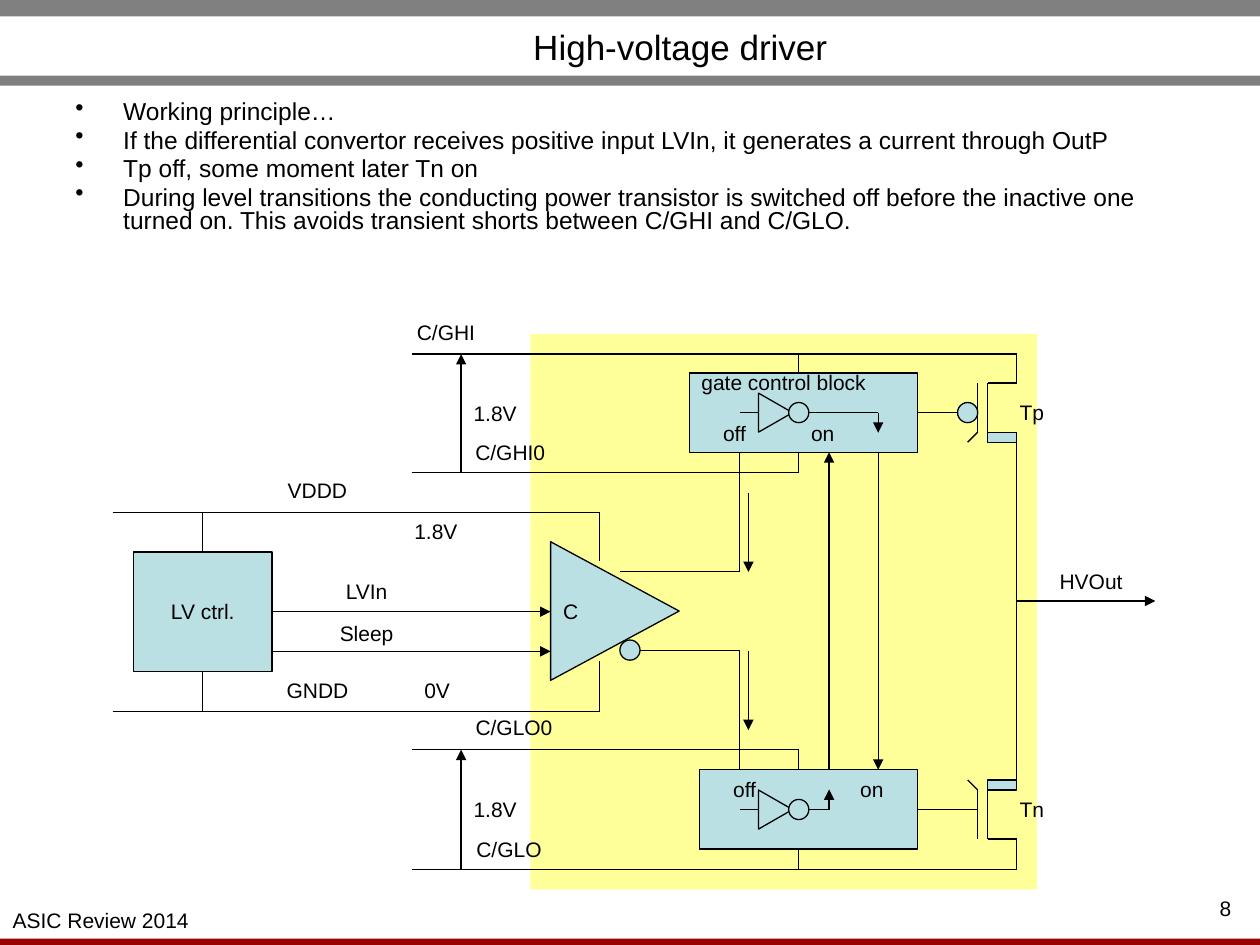
from dataclasses import dataclass

from lxml.etree import SubElement
from pptx import Presentation
from pptx.dml.color import RGBColor
from pptx.enum.shapes import MSO_CONNECTOR, MSO_SHAPE
from pptx.enum.text import MSO_AUTO_SIZE, PP_ALIGN
from pptx.oxml.ns import qn
from pptx.util import Inches, Pt

BLACK, BLUE, YELLOW, GRAY, RED = "000000", "BBE0E3", "FFFF99", "808080", "990000"
TOP, RIGHT, BOTTOM = 0, 3, 2
STUB = 0.155    # gap between a supply rail and its gate block
DOT = 0.16      # inverting bubble


@dataclass
class Box:
    x: float
    y: float
    w: float
    h: float

    @property
    def right(self):
        return self.x + self.w

    @property
    def bottom(self):
        return self.y + self.h

    @property
    def midx(self):
        return self.x + self.w / 2

    @property
    def midy(self):
        return self.y + self.h / 2

    def size(self):
        return [Inches(v) for v in (self.x, self.y, self.w, self.h)]


def color(code):
    return RGBColor.from_string(code)


def text(slide, box, lines, size=12, align=PP_ALIGN.CENTER, wrap=True,
         bullet=False, spacing=None, before=0):
    frame = slide.shapes.add_textbox(*box.size()).text_frame
    frame.word_wrap = wrap
    if not wrap:
        frame.auto_size = MSO_AUTO_SIZE.SHAPE_TO_FIT_TEXT
    for i, line in enumerate(lines):
        para = frame.paragraphs[0] if i == 0 else frame.add_paragraph()
        para.text = line
        para.alignment = align
        para.line_spacing = spacing
        if i:
            para.space_before = Pt(before)
        if bullet:
            props = para._p.get_or_add_pPr()
            props.set("marL", str(Inches(0.38)))
            props.set("indent", str(-Inches(0.38)))
            SubElement(props, qn("a:buChar")).set("char", "•")
            # the bullet takes its size from the paragraph end
            SubElement(para._p, qn("a:endParaRPr")).set("sz", str(size * 100))
        font = para.runs[0].font
        font.name, font.size = "Arial", Pt(size)
        font.color.rgb = color(BLACK)


def label(slide, words, midx, midy, w=1.0):
    text(slide, Box(midx - w / 2, midy - 0.15, w, 0.3), [words], wrap=False)


def shape(slide, box, fill, kind=MSO_SHAPE.RECTANGLE, line=BLACK, turn=0):
    item = slide.shapes.add_shape(kind, *box.size())
    item.shadow.inherit = False
    item.rotation = turn
    item.fill.solid()
    item.fill.fore_color.rgb = color(fill)
    if line:
        item.line.color.rgb = color(line)
        item.line.width = Pt(0.75)
    else:
        item.line.fill.background()
    return item


def wire(slide, *points, arrow=False, start=None):
    """Joins the points; start is a (shape, site) pair for the first end."""
    for i, (a, b) in enumerate(zip(points, points[1:])):
        line = slide.shapes.add_connector(
            MSO_CONNECTOR.STRAIGHT, *[Inches(v) for v in (*a, *b)])
        line.line.color.rgb = color(BLACK)
        line.line.width = Pt(0.75)
        if start and i == 0:
            line.begin_connect(*start)
        if arrow and b == points[-1]:
            SubElement(line.line._get_or_add_ln(), qn("a:tailEnd")).set("type", "triangle")
        SubElement(line._element.spPr, qn("a:effectLst"))


def bubble(slide, x, midy):
    shape(slide, Box(x, midy - DOT / 2, DOT, DOT), BLUE, MSO_SHAPE.OVAL)


def wedge(slide, box):
    """Triangle that points right and fills the box."""
    frame = Box(box.midx - box.h / 2, box.midy - box.w / 2, box.h, box.w)
    shape(slide, frame, BLUE, MSO_SHAPE.ISOSCELES_TRIANGLE, turn=90)


def header(slide, box):
    for y, h in ((box.y, 0.13), (box.bottom - 0.08, 0.08)):
        shape(slide, Box(box.x, y, box.w, h), GRAY, line=None)
    text(slide, Box(box.x + 1.3, box.y + 0.15, 8.2, 0.38), ["High-voltage driver"], size=20)


def footer(slide, box):
    shape(slide, Box(box.x, box.bottom - 0.05, box.w, 0.05), RED, line=None)
    label(slide, "ASIC Review 2014", box.x + 0.8, box.y + 0.24, w=1.6)
    text(slide, Box(box.right - 0.51, box.y, 0.47, 0.24), ["8"])


def points(slide, box):
    text(slide, box, [
        "Working principle…",
        "If the differential convertor receives positive input LVIn, it generates a current through OutP",
        "Tp off, some moment later Tn on",
        "During level transitions the conducting power transistor is switched off before the inactive one "
        "turned on. This avoids transient shorts between C/GHI and C/GLO.",
    ], size=14, align=PP_ALIGN.LEFT, bullet=True, spacing=0.8, before=2.8)


def supply(slide, box, ends, names):
    """Two rails 1.8 V apart; names holds (words, dx, dy) for each rail."""
    for y, end, stub, (words, dx, dy) in zip((box.y, box.bottom), ends, (STUB, -STUB), names):
        wire(slide, (box.x, y), (box.x + end, y))
        wire(slide, (box.x + 3.07, y), (box.x + 3.07, y + stub))
        label(slide, words, box.x + dx, y + dy)
    x = box.x + 0.39
    wire(slide, (x, box.bottom), (x, box.y), arrow=True)
    label(slide, "1.8V", box.x + 0.66, box.midy)


def gate(slide, box, out, sign, marks):
    """Gate control block; out is the x of the inverter's output arrow."""
    block = shape(slide, box, BLUE)
    x, y = box.right - 1.41, box.midy
    wire(slide, (x, y), (out, y), (out, y + sign * 0.16), arrow=True)
    wedge(slide, Box(x + 0.15, y - 0.155, 0.27, 0.31))
    bubble(slide, x + 0.39, y)
    for words, midx, dy in marks:
        label(slide, words, midx, y + dy)
    return block


def power(slide, box, name, sign, block, rail):
    """Power transistor, with its drain down (sign 1) or up (sign -1)."""
    y, half = box.midy, sign * box.h / 2
    plate, body = box.x + 0.08, box.x + 0.16
    notch = y + half - sign * 0.08
    wire(slide, (box.x - 0.4, y), (plate, y), start=(block, RIGHT))
    wire(slide, (plate, y - half), (plate, notch), (box.x, y + half))
    wire(slide, (body, y + half), (body, y - half), (box.right, y - half), (box.right, rail))
    shape(slide, Box(body, min(notch, y + half), box.right - body, 0.08), BLUE)
    if sign > 0:
        bubble(slide, box.x - 0.08, y)
    label(slide, name, box.right + 0.12, y)


def logic(slide, box, amp):
    """Low-voltage control and its rails and signals up to the amplifier."""
    block = shape(slide, box, BLUE)
    label(slide, "LV ctrl.", box.midx, box.midy)
    pin = amp.x + 0.39
    for site, edge, sign, name in ((TOP, box.y, -1, "VDDD"), (BOTTOM, box.bottom, 1, "GNDD")):
        rail = edge + sign * 0.315
        wire(slide, (box.midx, edge), (box.midx, rail), start=(block, site))
        wire(slide, (box.x - 0.16, rail), (pin, rail), (pin, amp.midy + sign * 0.395))
        label(slide, name, box.right + 0.36, rail - 0.17)
    label(slide, "1.8V", box.right + 1.3, box.y - 0.16)
    label(slide, "0V", box.right + 1.31, box.bottom + 0.15)
    wire(slide, (box.right, box.midy), (amp.x, box.midy), arrow=True, start=(block, RIGHT))
    wire(slide, (box.right, box.midy + 0.315), (amp.x, box.midy + 0.315), arrow=True)
    label(slide, "LVIn", box.right + 0.75, box.midy - 0.16)
    label(slide, "Sleep", box.right + 0.75, box.midy + 0.17)


def driver(slide, panel, amp):
    """Amplifier, gate blocks and power stage inside the panel."""
    upper = Box(panel.x + 1.26, panel.y + 0.31, 1.81, 0.63)
    lower = Box(panel.x + 1.34, panel.bottom - 0.95, 1.73, 0.63)
    drop, rise, fall = (panel.x + dx for dx in (1.66, 2.37, 2.76))
    wedge(slide, amp)
    label(slide, "C", amp.x + 0.16, amp.midy)
    for edge, sign, start in ((upper.bottom, -1, 0.55), (lower.y, 1, 0.71)):
        y = amp.midy + sign * 0.315
        wire(slide, (amp.x + start, y), (drop, y), (drop, edge))
    bubble(slide, amp.x + 0.55, amp.midy + 0.31)
    for y in (upper.bottom + 0.32, amp.midy + 0.315):
        wire(slide, (drop + 0.07, y), (drop + 0.07, y + 0.63), arrow=True)
    wire(slide, (rise, lower.y), (rise, upper.bottom), arrow=True)
    wire(slide, (fall, upper.bottom), (fall, lower.y), arrow=True)

    stages = (
        (upper, fall, 1, "Tp", (("off", drop - 0.04, 0.16), ("on", rise - 0.05, 0.16))),
        (lower, rise, -1, "Tn", (("off", drop + 0.04, -0.16), ("on", fall - 0.05, -0.16))),
    )
    for box, out, sign, name, marks in stages:
        block = gate(slide, box, out, sign, marks)
        part = Box(box.right + 0.4, box.midy - 0.235, 0.39, 0.47)
        power(slide, part, name, sign, block, box.midy - sign * 0.47)
    label(slide, "gate control block", upper.x + 0.75, upper.y + 0.07, w=1.8)

    drain = panel.right - 0.16
    wire(slide, (drain, upper.midy + 0.155), (drain, lower.midy - 0.155))
    wire(slide, (drain, panel.y + 2.12), (drain + 1.1, panel.y + 2.12), arrow=True)
    label(slide, "HVOut", drain + 0.59, panel.y + 1.96)


def main():
    deck = Presentation()
    deck.slide_width, deck.slide_height = Inches(10), Inches(7.5)
    slide = deck.slides.add_slide(deck.slide_layouts[6])
    panel = Box(4.21, 2.65, 4.02, 4.41)
    amp = Box(4.37, 4.3, 1.02, 1.1)
    header(slide, Box(0, 0, 10, 0.68))
    footer(slide, Box(0, 7.06, 10, 0.44))
    points(slide, Box(0.5, 0.76, 9, 1.73))
    shape(slide, panel, YELLOW, line=None)
    driver(slide, panel, amp)
    logic(slide, Box(1.06, 4.38, 1.1, 0.95), amp)
    supply(slide, Box(3.27, 2.81, 4.8, 0.94), (4.8, 3.07),
           (("C/GHI", 0.27, -0.17), ("C/GHI0", 0.78, -0.16)))
    supply(slide, Box(3.27, 5.95, 4.8, 0.95), (3.07, 4.8),
           (("C/GLO0", 0.81, -0.18), ("C/GLO", 0.77, -0.16)))
    deck.save("out.pptx")


if __name__ == "__main__":
    main()
